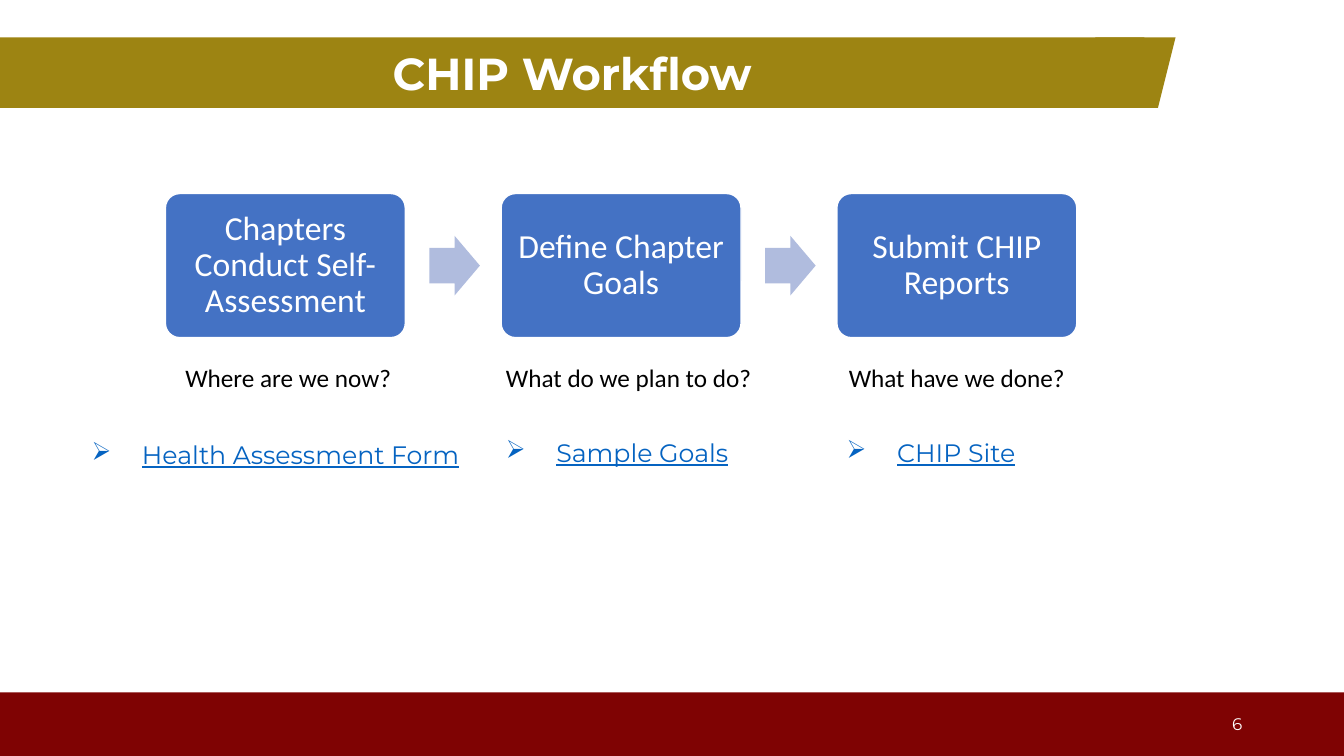
import pptx
import pptx.util
import pptx.dml.color
import pptx.enum.shapes
import pptx.enum.text
import pptx.oxml.ns
import lxml.etree

PX = 9144
SHAPE = pptx.enum.shapes.MSO_SHAPE
ALIGN = pptx.enum.text.PP_ALIGN
MIDDLE = pptx.enum.text.MSO_ANCHOR.MIDDLE

GOLD, MAROON, BLUE, LAVENDER = "9D8412", "7F0303", "4472C4", "B0BCDE"
WHITE, BLACK, LINK_BLUE = "FFFFFF", "000000", "0563C1"

STEP_WIDTH, STEP_PITCH = 238, 333
STEPS = ["Chapters Conduct Self-Assessment", "Define Chapter Goals", "Submit CHIP Reports"]
QUESTIONS = [
    ("Where are we now?", (174, 355, 227, 40)),
    ("What do we plan to do?", (492, 355, 267, 40)),
    ("What have we done?", (832, 355, 237, 40)),
]
RESOURCES = [
    ("Health Assessment Form", (31, 431, 472, 40)),
    ("Sample Goals", (442, 429, 424, 40)),
    ("CHIP Site", (780, 429, 424, 40)),
]


def emu(box):
    return [pptx.util.Emu(length * PX) for length in box]


def color(value):
    return pptx.dml.color.RGBColor.from_string(value)


def add_block(slide, preset, box, fill, outline=None):
    block = slide.shapes.add_shape(preset, *emu(box))
    block.shadow.inherit = False
    block.fill.solid()
    block.fill.fore_color.rgb = color(fill)
    if outline:
        block.line.color.rgb = color(outline)
        block.line.width = pptx.util.Pt(1)
    else:
        block.line.fill.background()
    return block


def add_words(frame, words, size, font, ink, align=ALIGN.LEFT, bold=False, underline=False):
    paragraph = frame.paragraphs[0]
    paragraph.alignment = align
    run = paragraph.add_run()
    run.text = words
    run.font.size = pptx.util.Pt(size)
    run.font.name = font
    run.font.color.rgb = color(ink)
    run.font.bold = bold
    run.font.underline = underline
    return paragraph


def add_label(slide, box, wrap=True):
    frame = slide.shapes.add_textbox(*emu(box)).text_frame
    frame.word_wrap = wrap
    return frame


def add_title_banner(slide, box, title):
    left, top, width, height = box
    tip_width = 97
    bar = add_block(slide, SHAPE.RECTANGLE, (left, top, width - 31, height), GOLD)
    bar.text_frame.vertical_anchor = MIDDLE
    add_words(bar.text_frame, title, 32, "Montserrat", WHITE, ALIGN.CENTER, bold=True)
    add_block(slide, SHAPE.PARALLELOGRAM, (left + width - tip_width, top, tip_width, height), GOLD)


def add_footer(slide, box, number):
    left, top, width, height = box
    add_block(slide, SHAPE.RECTANGLE, box, MAROON)
    frame = add_label(slide, (left + 942, top + 18, 300, 27))
    frame.vertical_anchor = MIDDLE
    add_words(frame, number, 12, "Montserrat", WHITE, ALIGN.RIGHT)


def add_workflow(slide, box, steps):
    left, top, width, height = box
    for index, step in enumerate(steps):
        step_left = left + index * STEP_PITCH
        card = add_block(slide, SHAPE.ROUNDED_RECTANGLE,
                         (step_left, top, STEP_WIDTH, height), BLUE, WHITE)
        card.adjustments[0] = 0.1
        frame = card.text_frame
        frame.vertical_anchor = MIDDLE
        frame.margin_left = frame.margin_right = pptx.util.Emu(10 * PX)
        frame.margin_top = frame.margin_bottom = pptx.util.Emu(10 * PX)
        paragraph = add_words(frame, step, 24, "Calibri", WHITE, ALIGN.CENTER)
        paragraph.line_spacing = 0.9
        if index < len(steps) - 1:
            arrow = add_block(slide, SHAPE.RIGHT_ARROW,
                              (step_left + 262, top + 42, 50, 59), LAVENDER)
            arrow.adjustments[0] = 0.6
            arrow.adjustments[1] = 0.5


def add_question(slide, box, question):
    add_words(add_label(slide, box, wrap=False), question, 18, "Calibri", BLACK)


def add_resource(slide, box, resource):
    frame = add_label(slide, box)
    paragraph = frame.paragraphs[0]
    paragraph.level = 1
    properties = paragraph._p.get_or_add_pPr()
    properties.set("marL", str(100 * PX))
    properties.set("indent", str(-50 * PX))
    bullet = lxml.etree.SubElement(properties, pptx.oxml.ns.qn("a:buChar"))
    bullet.set("char", "➢")
    add_words(frame, resource, 18, "Montserrat", LINK_BLUE, underline=True)


def add_workflow_slide(deck):
    slide = deck.slides.add_slide(deck.slide_layouts[6])
    add_footer(slide, (0, 687, 1333, 63), "6")
    add_title_banner(slide, (0, 37, 1166, 70), "CHIP Workflow")
    add_workflow(slide, (164, 192, 904, 143), STEPS)
    for question, box in QUESTIONS:
        add_question(slide, box, question)
    for resource, box in RESOURCES:
        add_resource(slide, box, resource)


def main():
    deck = pptx.Presentation()
    deck.slide_width, deck.slide_height = emu((1333, 750))
    add_workflow_slide(deck)
    deck.save("out.pptx")


if __name__ == "__main__":
    main()
